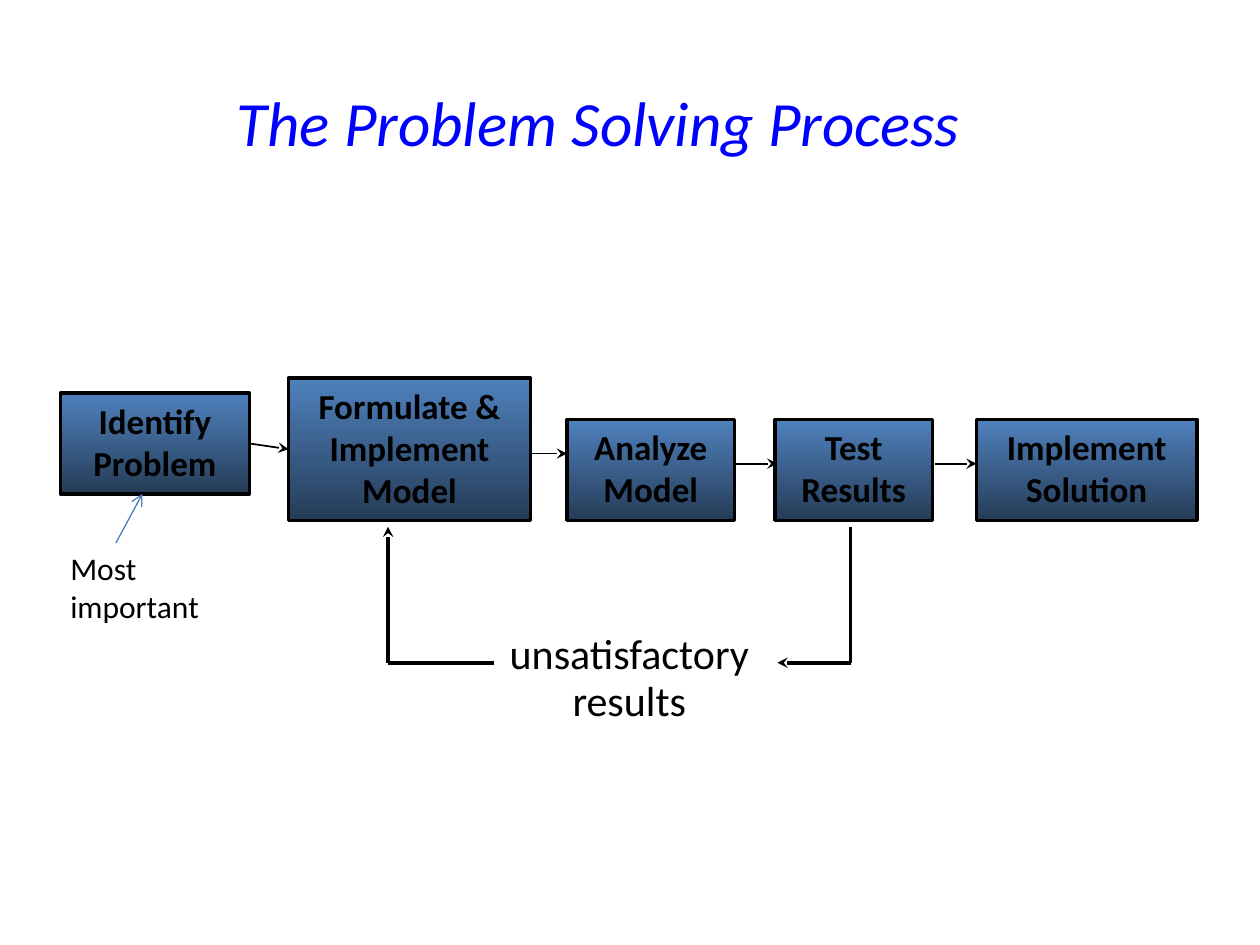
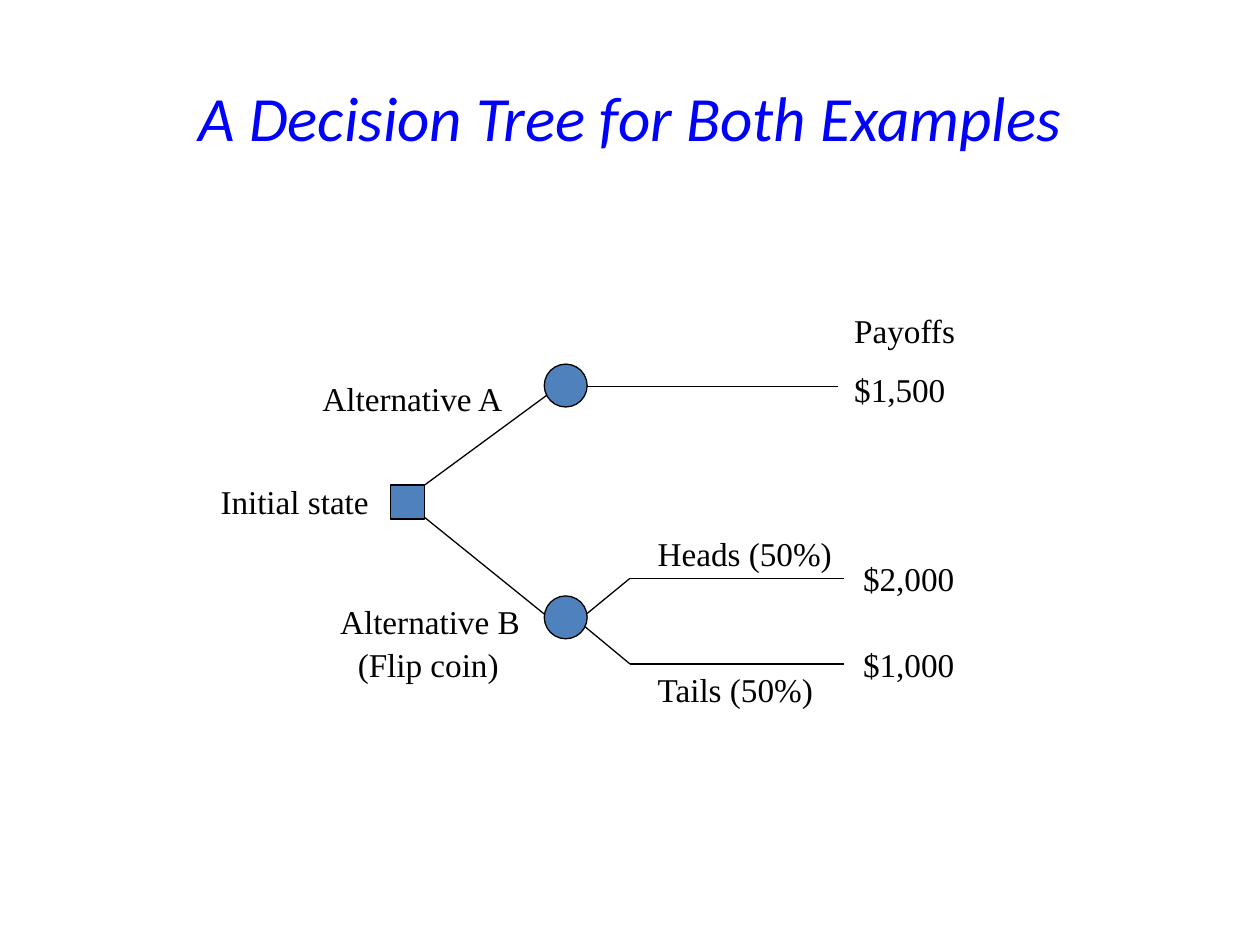
from lxml import etree
from pptx import Presentation
from pptx.dml.color import RGBColor
from pptx.enum.shapes import MSO_CONNECTOR, MSO_SHAPE
from pptx.enum.text import MSO_ANCHOR, PP_ALIGN
from pptx.oxml.ns import qn
from pptx.util import Inches, Pt

RECT, OVAL = MSO_SHAPE.RECTANGLE, MSO_SHAPE.OVAL
STRAIGHT = MSO_CONNECTOR.STRAIGHT
LEFT, CENTER = PP_ALIGN.LEFT, PP_ALIGN.CENTER
TOP, MIDDLE = MSO_ANCHOR.TOP, MSO_ANCHOR.MIDDLE

BLACK, BLUE, STEEL, NAVY, SKY = "000000", "0000FF", "4F81BD", "253C57", "4B7EBC"
SANS, SERIF = "Calibri", "Times New Roman"


def color(code):
    return RGBColor.from_string(code)


def write(shape, lines, size, font=SANS, tint=BLACK, align=LEFT, anchor=TOP,
          bold=False, slant=False, pad=(0.1, 0.05)):
    frame = shape.text_frame
    frame.word_wrap = True
    frame.vertical_anchor = anchor
    frame.margin_left = frame.margin_right = Inches(pad[0])
    frame.margin_top = frame.margin_bottom = Inches(pad[1])
    for i, line in enumerate(lines):
        para = frame.add_paragraph() if i else frame.paragraphs[0]
        para.alignment = align
        run = para.add_run()
        run.text = line
        run.font.name = font
        run.font.size = Pt(size)
        run.font.bold = bold
        run.font.italic = slant
        run.font.color.rgb = color(tint)
    return frame


def label(slide, box, lines, size, **style):
    return write(slide.shapes.add_textbox(*map(Inches, box)), lines, size, **style)


def block(slide, kind, box, width):
    shape = slide.shapes.add_shape(kind, *map(Inches, box))
    shape.shadow.inherit = False
    shape.line.color.rgb = color(BLACK)
    shape.line.width = Pt(width)
    return shape


def link(slide, start, end, width, head=None, tint=BLACK):
    line = slide.shapes.add_connector(STRAIGHT, *map(Inches, (*start, *end)))
    line.line.color.rgb = color(tint)
    line.line.width = Pt(width)
    if head:
        etree.SubElement(line.line._get_or_add_ln(), qn("a:tailEnd"), type=head)
    etree.SubElement(line._element.spPr, qn("a:effectLst"))
    return line


def title(slide, box, text):
    label(slide, box, [text], 36, tint=BLUE, align=CENTER, anchor=MIDDLE, slant=True)


def step(slide, box, text):
    shape = block(slide, RECT, box, 2)
    shape.fill.gradient()
    shape.fill.gradient_angle = 270
    for stop, tint, place in zip(shape.fill.gradient_stops, (STEEL, NAVY), (0, 1)):
        stop.color.rgb = color(tint)
        stop.position = place
    write(shape, [text], 20, align=CENTER, bold=True)
    return shape


def flow(slide, left, top):
    def at(x, y):
        return left + x, top + y

    steps = [
        step(slide, (*at(x, y), w, h), text)
        for x, y, w, h, text in (
            (0.02, 0.12, 1.5, 0.8, "Identify Problem"),
            (1.83, 0, 1.92, 1.13, "Formulate & Implement Model"),
            (4.04, 0.33, 1.33, 0.8, "Analyze Model"),
            (5.69, 0.33, 1.25, 0.8, "Test Results"),
            (7.29, 0.33, 1.75, 0.8, "Implement Solution"),
        )
    ]
    first = link(slide, at(1.52, 0.52), at(1.83, 0.56), 1, "stealth")
    first.begin_connect(steps[0], 3)
    first.end_connect(steps[1], 1)
    for x, end, y in ((3.75, 4.04, 0.6), (5.37, 5.71, 0.68), (6.96, 7.29, 0.68)):
        link(slide, at(x, y), at(end, y), 1, "stealth")

    back = label(slide, (*at(3.37, 1.93), 2.33, 0.82),
                 ["unsatisfactory", "results"], 24, align=CENTER)
    back.paragraphs[1].line_spacing = 0.3
    back.paragraphs[1].space_before = Pt(15)
    low, high = 2.26, 1.18
    for start, bend, end in (
        ((6.29, high), (6.29, low), (5.71, low)),
        ((3.46, low), (2.62, low), (2.62, high)),
    ):
        link(slide, at(*start), at(*bend), 2)
        link(slide, at(*bend), at(*end), 2, "stealth")

    label(slide, (*at(0, 1.31), 1.33, 0.71), ["Most important"], 18)
    link(slide, at(0.46, 1.31), at(0.67, 0.92), 0.75, "arrow", SKY)


def tree(slide, left, top):
    def at(x, y):
        return left + x, top + y

    heads, tails = (3.33, 2.17), (3.33, 2.85)
    for start, end in (
        ((1.7, 1.43), (2.72, 0.68)),
        ((1.63, 1.63), (2.72, 2.51)),
        ((2.94, 0.65), (4.98, 0.65)),
        ((2.94, 2.49), heads),
        ((2.92, 2.51), tails),
        (heads, (5.03, 2.17)),
        (tails, (5.03, 2.85)),
    ):
        link(slide, at(*start), at(*end), 0.75)

    for kind, x, y, side in (
        (RECT, 1.43, 1.43, 0.27),
        (OVAL, 2.65, 0.47, 0.34),
        (OVAL, 2.65, 2.31, 0.34),
    ):
        node = block(slide, kind, (*at(x, y), side, side), 0.75)
        node.fill.solid()
        node.fill.fore_color.rgb = color(STEEL)

    for x, y, width, text in (
        (0, 1.36, 2.11, "Initial state"),
        (0.81, 0.54, 1.97, "Alternative A"),
        (0.95, 2.31, 1.97, "Alternative B"),
        (1.09, 2.65, 1.97, "(Flip coin)"),
        (3.47, 1.77, 1.77, "Heads (50%)"),
        (3.47, 2.85, 1.5, "Tails (50%)"),
        (5.03, 0, 1.16, "Payoffs"),
        (5.03, 0.47, 1.56, "$1,500"),
        (5.1, 1.97, 1.56, "$2,000"),
        (5.1, 2.65, 1.56, "$1,000"),
    ):
        label(slide, (*at(x, y), width, 0.41), [text], 19, font=SERIF, pad=(0.08, 0.04))


def main():
    deck = Presentation()
    deck.slide_width, deck.slide_height = Inches(10), Inches(7.5)
    blank = deck.slide_layouts[6]

    slide = deck.slides.add_slide(blank)
    title(slide, (0.5, 0.52, 8.5, 0.89), "The Problem Solving Process")
    flow(slide, 0.46, 3)

    slide = deck.slides.add_slide(blank)
    title(slide, (0.5, 0.3, 9, 1.25), "A Decision Tree for Both Examples")
    tree(slide, 1.67, 2.42)

    deck.save("out.pptx")


if __name__ == "__main__":
    main()
